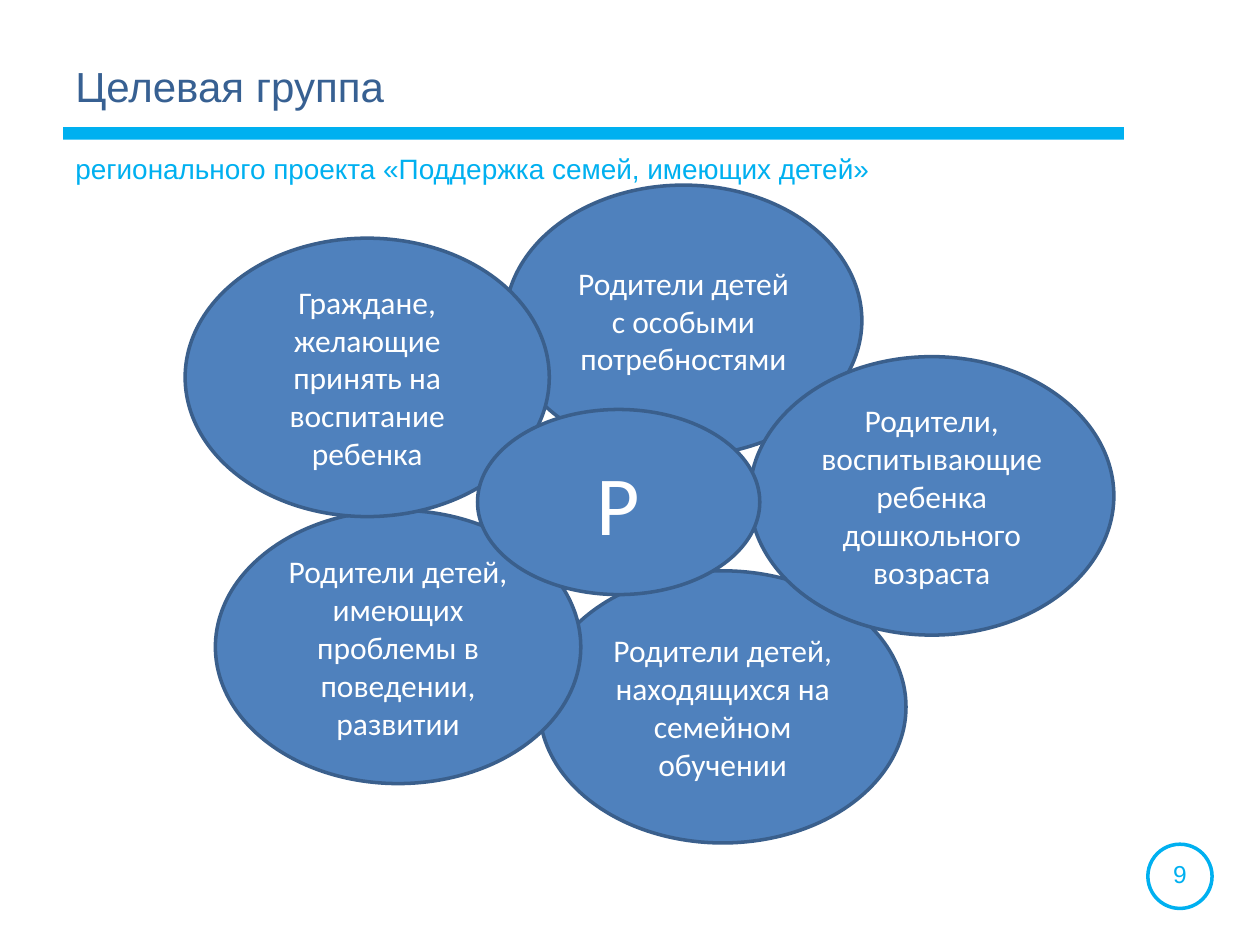
from pptx import Presentation
from pptx.dml.color import RGBColor
from pptx.enum import shapes, text
from pptx.util import Pt

CYAN, NAVY, BLUE, EDGE, WHITE = "00B0F0", "376092", "4F81BD", "3A5F8C", "FFFFFF"
OVAL = shapes.MSO_SHAPE.OVAL
LEFT, CENTER = text.PP_ALIGN.LEFT, text.PP_ALIGN.CENTER
TOP, MIDDLE = text.MSO_ANCHOR.TOP, text.MSO_ANCHOR.MIDDLE

# Petals from back to front: box in points, wording
PETALS = [
    ((308.2, 326.2, 209.5, 155.5), "Родители детей, находящихся на семейном обучении"),
    ((288.7, 105.8, 203.8, 154.8), "Родители детей с особыми потребностями"),
    ((123.1, 291.6, 208.8, 156.2), "Родители детей, имеющих проблемы в поведении, развитии"),
    ((105.8, 136.1, 208.1, 159.1), "Граждане, желающие принять на воспитание ребенка"),
    ((428.4, 203.8, 208.1, 159.1), "Родители, воспитывающие ребенка дошкольного возраста"),
]
CORE_BOX = (272.9, 234, 161.3, 105.8)


def color(value):
    return RGBColor.from_string(value)


def write(shape, words, size, font, ink, align=LEFT, anchor=TOP):
    frame = shape.text_frame
    frame.word_wrap = True
    frame.vertical_anchor = anchor
    para = frame.paragraphs[0]
    para.alignment = align
    span = para.add_run()
    span.text = words
    span.font.size = Pt(size)
    span.font.name = font
    span.font.color.rgb = color(ink)


def add_text(page, box, *style):
    write(page.shapes.add_textbox(*map(Pt, box)), *style)


def add_shape(page, kind, box, fill=None, line=None):
    shape = page.shapes.add_shape(kind, *map(Pt, box))
    shape.shadow.inherit = False
    if fill:
        shape.fill.solid()
        shape.fill.fore_color.rgb = color(fill)
    else:
        shape.fill.background()
    if line:
        shape.line.color.rgb = color(line)
        shape.line.width = Pt(2)
    else:
        shape.line.fill.background()
    return shape


def add_header(page, left, top, width):
    add_text(page, (left, top, 561, 46), "Целевая группа", 24, "Arial", NAVY)
    add_shape(page, shapes.MSO_SHAPE.RECTANGLE, (left, top + 41.7, width, 7.2), CYAN)
    add_text(page, (left, top + 51.8, 616, 35),
             "регионального проекта «Поддержка семей, имеющих детей»", 16, "Arial", CYAN)


def add_flower(page, petals, core_box):
    """Draw overlapping ovals around a core oval that lies on top."""
    ovals = [(box, words, 18) for box, words in petals] + [(core_box, "Р", 48)]
    for box, words, size in ovals:
        oval = add_shape(page, OVAL, box, BLUE, EDGE)
        write(oval, words, size, "Calibri", WHITE, CENTER, MIDDLE)


def add_page_number(page, left, top, side, number):
    add_shape(page, OVAL, (left, top, side, side), line=CYAN)
    add_text(page, (left - 2.3, top + 5, side + 4.6, 24.5),
             number, 14, "Arial", CYAN, CENTER)


def main():
    deck = Presentation()
    deck.slide_width, deck.slide_height = Pt(720), Pt(540)
    page = deck.slides.add_slide(deck.slide_layouts[6])
    add_header(page, 36, 31, 606.2)
    add_flower(page, PETALS, CORE_BOX)
    add_page_number(page, 655.9, 482.4, 36.7, "9")
    deck.save("out.pptx")


if __name__ == "__main__":
    main()
